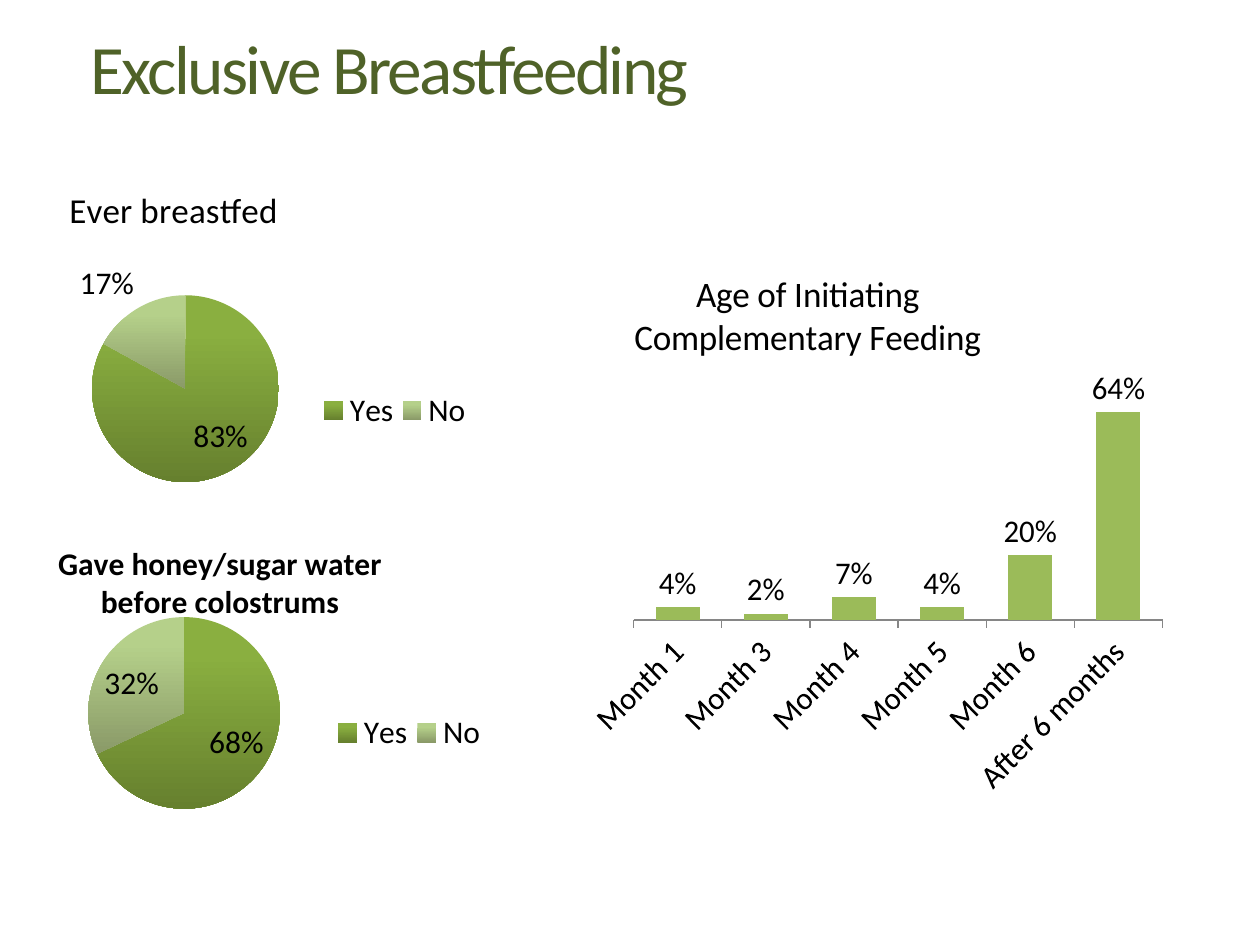
from dataclasses import dataclass

import lxml.etree
import pptx
import pptx.chart.data
import pptx.dml.color
import pptx.enum.chart
import pptx.enum.text
import pptx.oxml.ns
import pptx.util


@dataclass(frozen=True)
class Theme:
    font: str = "Calibri"
    text: str = "000000"
    heading: str = "4F6228"
    bar: str = "9BBB59"
    axis: str = "868686"
    slices: tuple = (("8AAF40", "66802E"), ("B5D08A", "8A9A68"))
    heading_size: float = 39.6
    column_title_size: float = 20.5
    pie_title_size: float = 20
    body_size: float = 18


def rgb(code):
    return pptx.dml.color.RGBColor.from_string(code)


def place(element, index, **shares):
    """Fix a chart part's position, in shares of the chart's frame."""
    qn = pptx.oxml.ns.qn
    for old in element.findall(qn("c:layout")):
        element.remove(old)
    layout = lxml.etree.Element(qn("c:layout"))
    manual = lxml.etree.SubElement(layout, qn("c:manualLayout"))
    if index == 0:
        lxml.etree.SubElement(manual, qn("c:layoutTarget"), val="inner")
    for axis in ("x", "y"):
        lxml.etree.SubElement(manual, qn(f"c:{axis}Mode"), val="edge")
    for side, share in shares.items():
        lxml.etree.SubElement(manual, qn(f"c:{side}"), val=str(share))
    element.insert(index, layout)


class SlideBuilder:
    """Frames are (column, row, columns, rows) on a grid of 120 by 90."""

    def __init__(self, deck, theme):
        self.theme = theme
        self.slide = deck.slides.add_slide(deck.slide_layouts[6])
        self.column = deck.slide_width / 120
        self.row = deck.slide_height / 90

    def frame(self, left, top, width, height):
        return (int(left * self.column), int(top * self.row),
                int(width * self.column), int(height * self.row))

    def style(self, font, size, color, bold=False):
        font.name = self.theme.font
        font.size = pptx.util.Pt(size)
        font.color.rgb = rgb(color)
        font.bold = bold

    def heading(self, frame, text):
        body = self.slide.shapes.add_textbox(*self.frame(*frame)).text_frame
        body.word_wrap = True
        body.vertical_anchor = pptx.enum.text.MSO_ANCHOR.MIDDLE
        body.margin_left = pptx.util.Inches(0.22)
        body.margin_top = 0
        body.margin_bottom = pptx.util.Inches(0.32)
        line = body.paragraphs[0]
        run = line.add_run()
        run.text = text
        self.style(line.font, self.theme.heading_size, self.theme.heading)
        run.font._element.set("spc", "-150")

    def chart(self, kind, frame, title, title_size, title_at, values, plot_at, bold=False):
        data = pptx.chart.data.CategoryChartData(number_format="#,##0%")
        data.categories = values.keys()
        data.add_series("Series 1", values.values())
        chart = self.slide.shapes.add_chart(kind, *self.frame(*frame), data).chart
        self.style(chart.font, self.theme.body_size, self.theme.text)

        chart.has_title = True
        caption = chart.chart_title.text_frame
        caption.text = title
        self.style(caption.paragraphs[0].font, title_size, self.theme.text, bold)
        place(chart.chart_title._element, 1, x=title_at[0], y=title_at[1])
        place(chart._chartSpace.chart.plotArea, 0, **dict(zip("xywh", plot_at)))

        plot = chart.plots[0]
        plot.has_data_labels = True
        labels = plot.data_labels
        labels.show_value = True
        labels.show_percentage = False
        labels.number_format = "#,##0%"
        labels.number_format_is_linked = False
        self.style(labels.font, self.theme.body_size, self.theme.text)
        return chart

    def pie(self, frame, title, title_size, title_at, yes_share, legend_at, bold=False):
        values = {"Yes": yes_share, "No": round(1 - yes_share, 2)}
        chart = self.chart(pptx.enum.chart.XL_CHART_TYPE.PIE, frame, title, title_size,
                           title_at, values, (0.069, 0.271, 0.445, 0.636), bold)
        chart.plots[0].vary_by_categories = True
        chart.plots[0].data_labels.position = pptx.enum.chart.XL_LABEL_POSITION.BEST_FIT
        for index, shades in enumerate(self.theme.slices):
            fill = chart.series[0].points[index].format.fill
            fill.gradient()
            fill.gradient_angle = 270
            for stop, shade in zip(fill.gradient_stops, shades):
                stop.color.rgb = rgb(shade)
            fill.gradient_stops[0].position = 0.2
        chart.has_legend = True
        chart.legend.position = pptx.enum.chart.XL_LEGEND_POSITION.RIGHT
        chart.legend.include_in_layout = False
        self.style(chart.legend.font, self.theme.body_size, self.theme.text)
        place(chart.legend._element, 1, **dict(zip("xywh", legend_at)))

    def columns(self, frame, title, title_at, values):
        chart = self.chart(pptx.enum.chart.XL_CHART_TYPE.COLUMN_CLUSTERED, frame, title,
                           self.theme.column_title_size, title_at, values,
                           (0.06, 0.22, 0.935, 0.385))
        chart.has_legend = False
        plot = chart.plots[0]
        plot.vary_by_categories = False
        plot.gap_width = 100
        plot.data_labels.position = pptx.enum.chart.XL_LABEL_POSITION.OUTSIDE_END
        fill = chart.series[0].format.fill
        fill.solid()
        fill.fore_color.rgb = rgb(self.theme.bar)

        share_axis = chart.value_axis
        share_axis.visible = False
        share_axis.has_major_gridlines = False
        share_axis.minimum_scale, share_axis.maximum_scale = 0, 0.7
        month_axis = chart.category_axis
        month_axis.major_tick_mark = pptx.enum.chart.XL_TICK_MARK.OUTSIDE
        month_axis.format.line.color.rgb = rgb(self.theme.axis)
        self.style(month_axis.tick_labels.font, self.theme.body_size, self.theme.text)
        month_axis._element.txPr.bodyPr.set("rot", "-2700000")


def main():
    deck = pptx.Presentation()
    deck.slide_width = pptx.util.Inches(10)
    deck.slide_height = pptx.util.Inches(7.5)
    theme = Theme()
    page = SlideBuilder(deck, theme)

    page.heading((6, 3.6, 108, 9.4), "Exclusive Breastfeeding")
    page.pie((6, 17, 40, 34), "Ever breastfed", theme.pie_title_size, (0, 0),
             0.83, (0.6, 0.59, 0.38, 0.12))
    page.pie((5, 51, 43, 28.7), "Gave honey/sugar water before colostrums",
             theme.body_size, (-0.01, -0.01), 0.68, (0.61, 0.59, 0.36, 0.13), bold=True)
    page.columns((56, 25, 55, 56.3), "Age of Initiating Complementary Feeding", (0.05, 0),
                 {"Month 1": 0.04, "Month 3": 0.02, "Month 4": 0.07,
                  "Month 5": 0.04, "Month 6": 0.2, "After 6 months": 0.64})
    deck.save("out.pptx")


if __name__ == "__main__":
    main()
